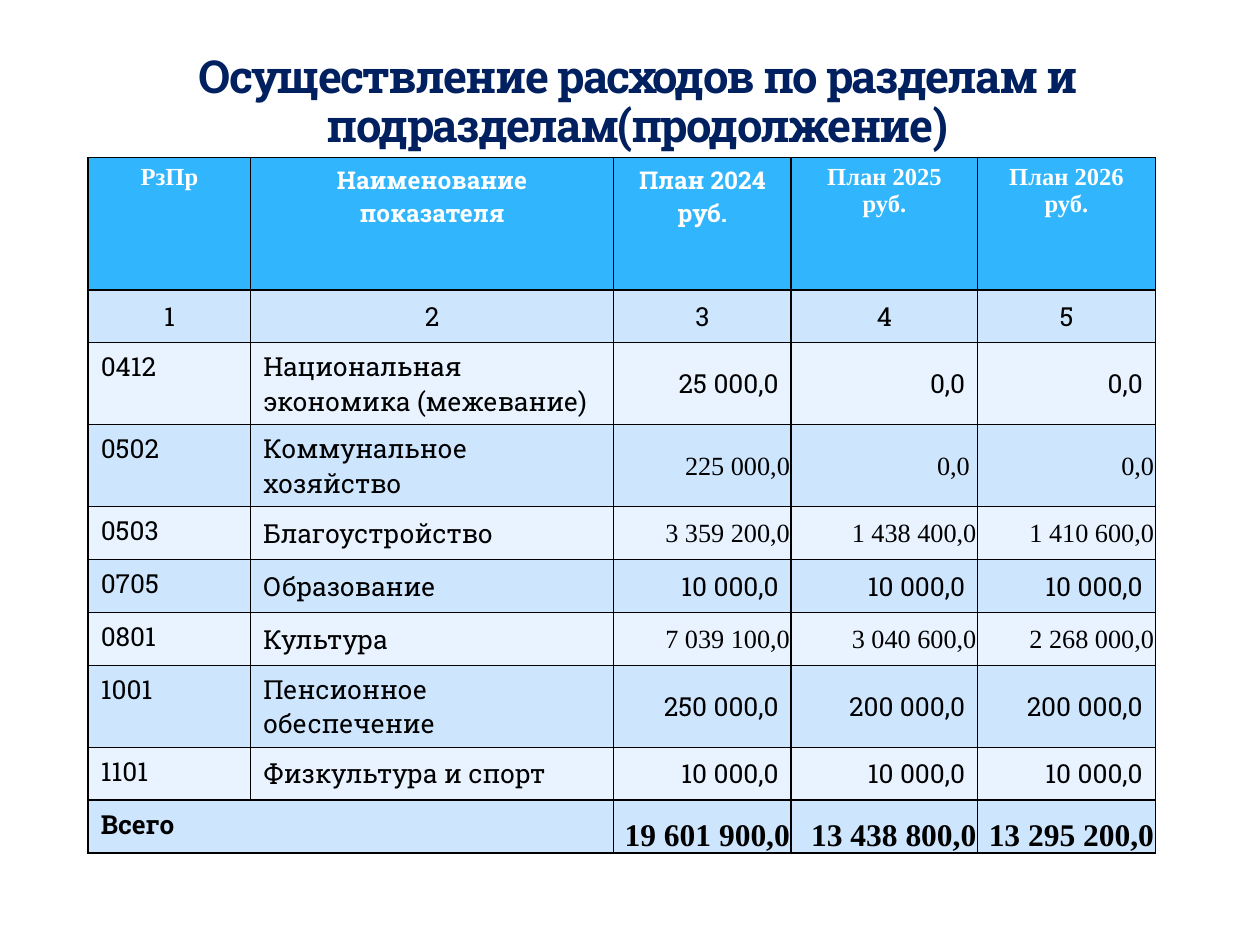
from pptx import Presentation
from pptx.dml.color import RGBColor
from pptx.enum.text import MSO_ANCHOR as Anchor, MSO_AUTO_SIZE as Fit, PP_ALIGN as Align
from pptx.oxml.ns import qn
from pptx.util import Inches, Pt
from lxml.etree import SubElement as sub

SLAB = "Roboto Slab"
ROMAN = "Times New Roman"
TITLE = "Осуществление расходов по разделам и подразделам(продолжение)"
HEAD = ["РзПр", "Наименование показателя", "План 2024 руб.", "План 2025 руб.", "План 2026 руб."]
ROWS = [
    ["0412", "Национальная экономика (межевание)", "25 000,0", "0,0", "0,0"],
    ["0502", "Коммунальное хозяйство", "225 000,0", "0,0 ", "0,0"],
    ["0503", "Благоустройство", "3 359 200,0", "1 438 400,0", "1 410 600,0"],
    ["0705", "Образование", "10 000,0", "10 000,0", "10 000,0"],
    ["0801", "Культура", "7 039 100,0", "3 040 600,0", "2 268 000,0"],
    ["1001", "Пенсионное обеспечение", "250 000,0", "200 000,0", "200 000,0"],
    ["1101", "Физкультура и спорт", "10 000,0", "10 000,0", "10 000,0"],
]
TOTAL = ["Всего", "", "19 601 900,0", "13 438 800,0", "13 295 200,0"]
TIGHT_ROWS = {"0502", "0503", "0801"}
WIDTHS = [1.29, 2.88, 1.41, 1.48, 1.41]
HEIGHTS = [1.05, 0.42, 0.59] + [0.42] * 7
BANDS = ["CEE5FE", "E8F3FF"]


def color(code):
    return RGBColor.from_string(code)


def apply(item, values):
    for name, value in values.items():
        setattr(item, name, value)


class Page:
    base = {"name": SLAB, "size": Pt(15), "bold": False}
    head = {"size": Pt(14), "bold": True}
    tight = {"margin_left": Inches(0.01), "margin_right": Inches(0.01),
             "margin_top": Inches(0.01), "margin_bottom": 0}

    def __init__(self, deck):
        self.slide = deck.slides.add_slide(deck.slide_layouts[5])

    def label(self, para, text, align, ink, font):
        para.alignment = align
        run = para.add_run()
        run.text = text
        apply(run.font, {**self.base, **font})
        run.font.color.rgb = color(ink)
        return run

    def title(self, text, box):
        shape = self.slide.shapes.title
        apply(shape, dict(zip(("left", "top", "width", "height"), map(Inches, box))))
        frame = shape.text_frame
        apply(frame, {"word_wrap": True, "auto_size": Fit.NONE, "vertical_anchor": Anchor.BOTTOM})
        para = frame.paragraphs[0]
        para.line_spacing = 0.9
        run = self.label(para, text, Align.CENTER, "002060", {"size": Pt(26), "bold": True})
        run.font._element.set("spc", "-100")

    def table(self, left, top):
        frame = self.slide.shapes.add_table(
            len(HEIGHTS), len(WIDTHS), Inches(left), Inches(top),
            Inches(sum(WIDTHS)), Inches(sum(HEIGHTS)))
        grid = frame.table
        for col, width in zip(grid.columns, WIDTHS):
            col.width = Inches(width)
        for row, height in zip(grid.rows, HEIGHTS):
            row.height = Inches(height)
        return grid

    def cell(self, cell, text, fill, align=Align.LEFT, anchor=Anchor.TOP,
             ink="000000", tight=False, **font):
        cell.vertical_anchor = anchor
        if tight:
            apply(cell, self.tight)
        if text:
            self.label(cell.text_frame.paragraphs[0], text, align, ink, font)
        self.border(cell)
        cell.fill.solid()
        cell.fill.fore_color.rgb = color(fill)

    def border(self, cell):
        props = cell._tc.get_or_add_tcPr()
        for side in ("a:lnL", "a:lnR", "a:lnT", "a:lnB"):
            line = sub(props, qn(side), w=str(Pt(1)))
            sub(sub(line, qn("a:solidFill")), qn("a:srgbClr"), val="000000")


def main():
    deck = Presentation()
    apply(deck, {"slide_width": Inches(10), "slide_height": Inches(7.5)})
    page = Page(deck)
    grid = page.table(0.7, 1.25)
    for c, text in enumerate(HEAD):
        name = SLAB if c in (1, 2) else ROMAN
        page.cell(grid.cell(0, c), text, "31B6FD", Align.CENTER, ink="FFFFFF",
                  name=name, **page.head)
        page.cell(grid.cell(1, c), str(c + 1), BANDS[0], Align.CENTER, Anchor.MIDDLE)
    for r, row in enumerate(ROWS, 2):
        tight = row[0] in TIGHT_ROWS
        for c, text in enumerate(row):
            cell, fill = grid.cell(r, c), BANDS[(r + 1) % 2]
            if c < 2:
                page.cell(cell, text, fill, anchor=Anchor.MIDDLE if c else Anchor.TOP)
            else:
                page.cell(cell, text, fill, Align.RIGHT, Anchor.MIDDLE, tight=tight,
                          name=ROMAN if tight else SLAB)
    last = len(HEIGHTS) - 1
    grid.cell(last, 0).merge(grid.cell(last, 1))
    for c, text in enumerate(TOTAL):
        cell = grid.cell(last, c)
        if c < 2:
            page.cell(cell, text, BANDS[0], bold=True)
        else:
            page.cell(cell, text, BANDS[0], Align.RIGHT, Anchor.BOTTOM, tight=True,
                      name=ROMAN, size=Pt(18), bold=True)
    page.title(TITLE, (1.22, 0.76, 7.68, 0.5))
    deck.save("out.pptx")


if __name__ == "__main__":
    main()
